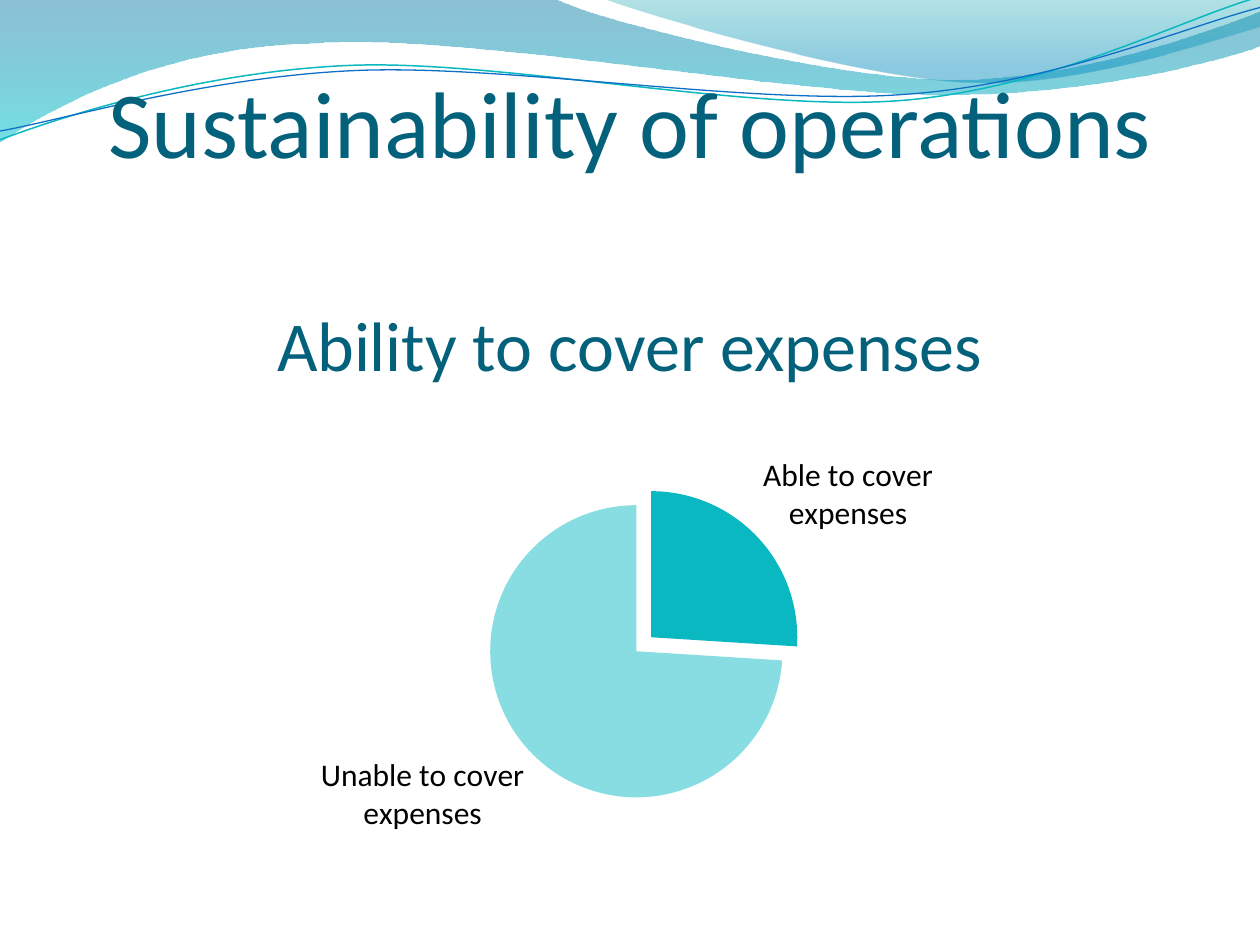
import pptx
import pptx.chart.data
import pptx.dml.color
import pptx.enum.chart
import pptx.enum.text
import pptx.oxml
import pptx.oxml.ns
import pptx.util
from dataclasses import dataclass
from pptx.util import Inches


@dataclass(frozen=True)
class Theme:
    """Colours, fonts and type sizes of the slide."""
    heading: str = "04617B"
    text: str = "000000"
    teal_line: str = "0AB8BF"
    blue_line: str = "0F6FC6"
    slices: tuple = ("0AB8C2", "87DDE1")
    font: str = "Calibri"
    chart_font: str = "TeX Gyre Pagella"
    title_size: int = 54
    chart_title_size: int = 40
    label_size: int = 18
    chart_size: int = 10


THEME = Theme()
CHART_WIDTH, CHART_HEIGHT = 9, 4.8

WAVES = [
    ([(0, 0), (4.4, -0.01),
      (4.76, 0.17, 6.64, 0.63, 7.58, 0.63), (8.53, 0.63, 9.58, 0.26, 10, 0.09),
      (10.01, 0.36),
      (9.83, 0.44, 8.7, 0.76, 7.46, 0.75), (6.22, 0.75, 3.82, 0.28, 2.57, 0.34),
      (1.29, 0.36, 0.46, 0.83, -0.01, 1.13), (0, 0)],
     [(0, "0074A1", 45), (1, "00C6CF", 55)]),
    ([(4.79, -0.01),
      (5.09, 0.11, 6.82, 0.62, 7.69, 0.65), (8.56, 0.69, 9.61, 0.32, 10, 0.21),
      (10, 0), (4.79, -0.01)],
     [(0, "00A1A9", 30), (0.8, "008BBF", 45)]),
]
STRANDS = [
    ([(0, 1.11), (0.48, 0.93, 1.58, 0.57, 2.77, 0.52),
      (3.95, 0.47, 5.93, 0.89, 7.13, 0.8), (8.33, 0.71, 9.38, 0.15, 9.98, -0.02)],
     THEME.teal_line, 0.85),
    ([(0, 1.04), (0.47, 0.96, 1.64, 0.61, 2.83, 0.56),
      (4.03, 0.51, 5.97, 0.84, 7.17, 0.75), (8.36, 0.67, 9.41, 0.21, 10, 0.06)],
     THEME.blue_line, 0.75),
]


def rgb(value):
    """Return a colour object for a hex string."""
    return pptx.dml.color.RGBColor.from_string(value)


def apply(obj, **formats):
    """Set each format value as an attribute of the object."""
    for name, value in formats.items():
        setattr(obj, name, value)


def style_font(font, name, size, color):
    """Set typeface, size and colour of a font."""
    apply(font, name=name, size=pptx.util.Pt(size), bold=False)
    font.color.rgb = rgb(color)


def bend(sp, steps):
    """Turn the line segments of a freeform into its cubic curves."""
    lines = list(sp._element.spPr.iter(pptx.oxml.ns.qn("a:lnTo")))
    for line, step in zip(lines, steps[1:]):
        if len(step) == 2:
            continue
        points = "".join(
            f'<a:pt x="{Inches(x) - sp.left}" y="{Inches(y) - sp.top}"/>'
            for x, y in zip(step[::2], step[1::2]))
        line.getparent().replace(line, pptx.oxml.parse_xml(
            f'<a:cubicBezTo {pptx.oxml.ns.nsdecls("a")}>{points}</a:cubicBezTo>'))


def add_outline(s, steps, close):
    """Add a freeform that follows the given line and curve steps."""
    ends = [(Inches(step[-2]), Inches(step[-1])) for step in steps]
    builder = s.shapes.build_freeform(*ends[0])
    builder.add_line_segments(ends[1:], close=close)
    sp = builder.convert_to_shape()
    sp.shadow.inherit = False
    bend(sp, steps)
    return sp


def add_wave(s, steps, stops):
    """Add a wave with a translucent vertical gradient."""
    sp = add_outline(s, steps, True)
    sp.line.fill.background()
    sp.fill.gradient()
    sp.fill.gradient_angle = 270
    for stop, (position, color, _) in zip(sp.fill.gradient_stops, stops):
        stop.position = position
        stop.color.rgb = rgb(color)
    colors = sp._element.spPr.iter(pptx.oxml.ns.qn("a:srgbClr"))
    for node, (_, _, alpha) in zip(list(colors), stops):
        node.append(pptx.oxml.parse_xml(
            f'<a:alpha {pptx.oxml.ns.nsdecls("a")} val="{alpha * 1000}"/>'))


def add_strand(s, steps, color, width):
    """Add a thin open curve."""
    sp = add_outline(s, steps, False)
    sp.fill.background()
    sp.line.color.rgb = rgb(color)
    sp.line.width = pptx.util.Pt(width)


def add_title(s, text):
    """Add the centred slide title."""
    sp = s.shapes.add_textbox(Inches(0.5), Inches(0.77), Inches(9), Inches(1.25))
    tf = sp.text_frame
    apply(tf, word_wrap=True, vertical_anchor=pptx.enum.text.MSO_ANCHOR.BOTTOM,
          margin_left=0, margin_right=0, margin_top=Inches(0.05),
          margin_bottom=Inches(0.61))
    p = tf.paragraphs[0]
    p.alignment = pptx.enum.text.PP_ALIGN.CENTER
    r = p.add_run()
    r.text = text
    style_font(r.font, THEME.font, THEME.title_size, THEME.heading)


def place(node, index, target="", **lengths):
    """Give a chart part a manual layout from lengths in inches."""
    for old in node.findall(pptx.oxml.ns.qn("c:layout")):
        node.remove(old)
    inner = f'<c:layoutTarget val="{target}"/>' if target else ""
    modes = '<c:xMode val="edge"/><c:yMode val="edge"/>'
    values = "".join(
        f'<c:{k} val="{v / (CHART_WIDTH if k in "xw" else CHART_HEIGHT):.4f}"/>'
        for k, v in lengths.items())
    node.insert(index, pptx.oxml.parse_xml(
        f'<c:layout {pptx.oxml.ns.nsdecls("c")}><c:manualLayout>'
        f'{inner}{modes}{values}</c:manualLayout></c:layout>'))


def add_pie(s, title, shares):
    """Add the pie chart with its first slice pulled out."""
    data = pptx.chart.data.CategoryChartData()
    data.categories = list(shares)
    data.add_series("Series 1", list(shares.values()))
    chart = s.shapes.add_chart(
        pptx.enum.chart.XL_CHART_TYPE.PIE, Inches(0.5), Inches(2.12),
        Inches(CHART_WIDTH), Inches(CHART_HEIGHT), data).chart
    style_font(chart.font, THEME.chart_font, THEME.chart_size, THEME.text)
    apply(chart, has_legend=False, has_title=True)
    p = chart.chart_title.text_frame.paragraphs[0]
    r = p.add_run()
    r.text = title
    style_font(r.font, THEME.font, THEME.chart_title_size, THEME.heading)
    place(chart.chart_title._element, 1, x=1.6, y=0.14)
    place(chart._chartSpace.chart.plotArea, 0, "inner", x=3.39, y=1.89, w=2.32, h=2.32)

    plot = chart.plots[0]
    apply(plot, vary_by_categories=True, has_data_labels=True)
    labels = plot.data_labels
    apply(labels, show_category_name=True, show_value=False, show_percentage=False,
          position=pptx.enum.chart.XL_LABEL_POSITION.OUTSIDE_END)
    style_font(labels.font, THEME.font, THEME.label_size, THEME.text)
    for i, color in enumerate(THEME.slices):
        point = plot.series[0].points[i]
        point.format.fill.solid()
        point.format.fill.fore_color.rgb = rgb(color)
        point.format.line.fill.background()
    first = plot.series[0]._element.find(pptx.oxml.ns.qn("c:dPt"))
    first.find(pptx.oxml.ns.qn("c:spPr")).addprevious(pptx.oxml.parse_xml(
        f'<c:explosion {pptx.oxml.ns.nsdecls("c")} val="14"/>'))


def main():
    """Build and save the slide."""
    prs = pptx.Presentation()
    apply(prs, slide_width=Inches(10), slide_height=Inches(7.5))
    s = prs.slides.add_slide(prs.slide_layouts[6])
    for steps, stops in WAVES:
        add_wave(s, steps, stops)
    for steps, color, width in STRANDS:
        add_strand(s, steps, color, width)
    add_title(s, "Sustainability of operations")
    add_pie(s, "Ability to cover expenses",
            {"Able to cover expenses": 26, "Unable to cover expenses": 74})
    prs.save("out.pptx")


if __name__ == "__main__":
    main()
